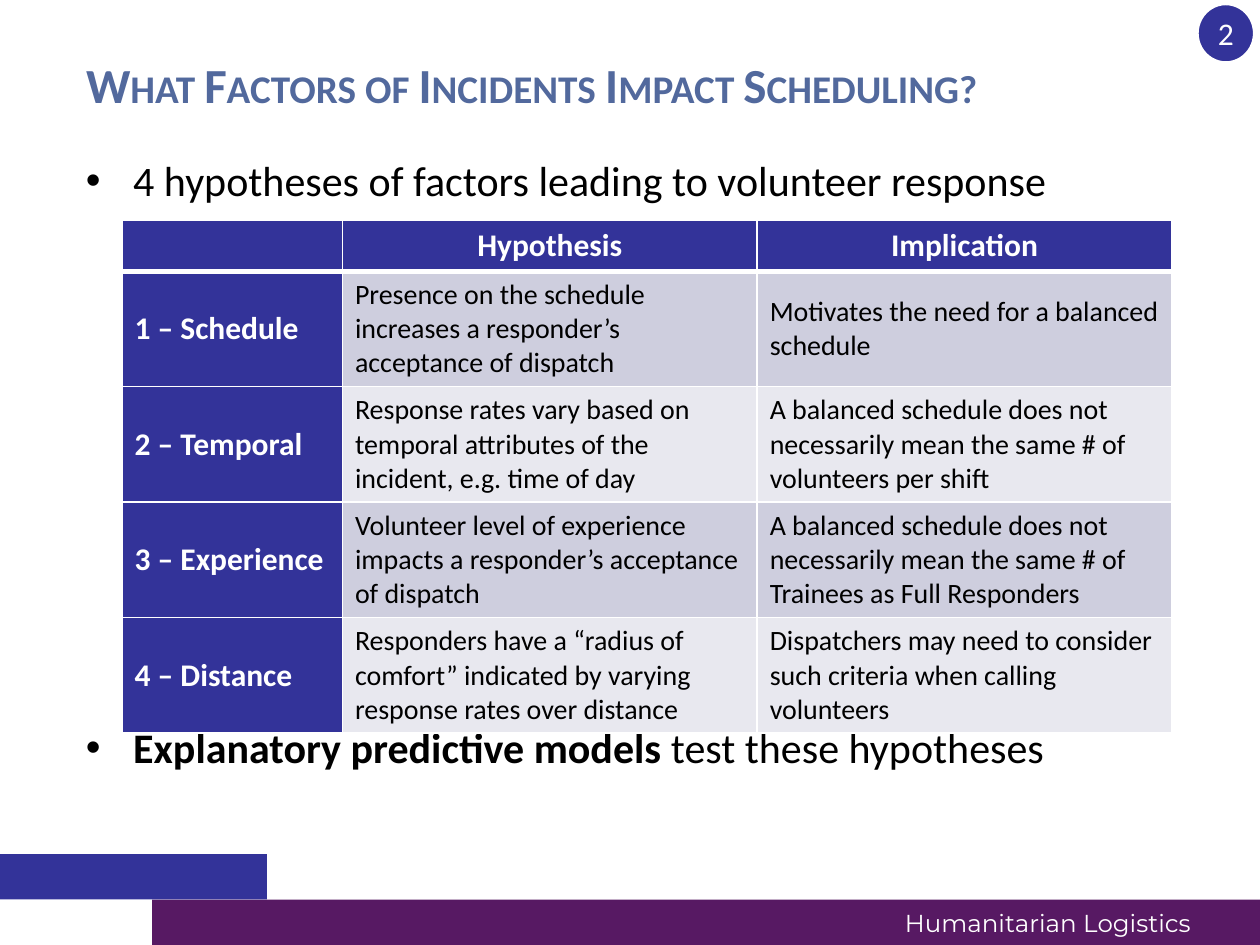
from lxml import etree
from pptx import Presentation
from pptx.dml.color import RGBColor
from pptx.enum.shapes import MSO_SHAPE
from pptx.enum.text import MSO_ANCHOR, PP_ALIGN
from pptx.oxml.ns import qn
from pptx.util import Pt

RECT, OVAL = MSO_SHAPE.RECTANGLE, MSO_SHAPE.OVAL
MIDDLE, TOP = MSO_ANCHOR.MIDDLE, MSO_ANCHOR.TOP
LEFT, CENTER = PP_ALIGN.LEFT, PP_ALIGN.CENTER

BLUE = RGBColor(0x33, 0x33, 0x99)
PURPLE = RGBColor(0x57, 0x19, 0x63)
TITLE_BLUE = RGBColor(0x52, 0x69, 0x9D)
BLACK = RGBColor(0x00, 0x00, 0x00)
WHITE = RGBColor(0xFF, 0xFF, 0xFF)
BANDS = [RGBColor(0xCE, 0xCE, 0xDE), RGBColor(0xE8, 0xE8, 0xEF)]

HEAD = dict(size=Pt(18), bold=True, color=WHITE)
CELL = dict(size=Pt(16), color=BLACK)
BODY = dict(size=Pt(24), color=BLACK)

ROWS = [
    ("", "Hypothesis", "Implication"),
    ("1 – Schedule",
     "Presence on the schedule increases a responder’s acceptance of dispatch",
     "Motivates the need for a balanced schedule"),
    ("2 – Temporal",
     "Response rates vary based on temporal attributes of the incident, e.g. time of day",
     "A balanced schedule does not necessarily mean the same # of volunteers per shift"),
    ("3 – Experience",
     "Volunteer level of experience impacts a responder’s acceptance of dispatch",
     "A balanced schedule does not necessarily mean the same # of Trainees as Full Responders"),
    ("4 – Distance",
     "Responders have a “radius of comfort” indicated by varying response rates over distance",
     "Dispatchers may need to consider such criteria when calling volunteers"),
]


class Deck:
    """Holds the style and the current slide."""

    def __init__(self, width, height, font):
        self.prs = Presentation()
        self.prs.slide_width, self.prs.slide_height = Pt(width), Pt(height)
        self.font = font
        self.s = self.prs.slides.add_slide(self.prs.slide_layouts[5])

    def run(self, p, text, color, **fmt):
        r = p.add_run()
        r.text = text
        r.font.color.rgb = color
        for name, value in {"name": self.font, **fmt}.items():
            setattr(r.font, name, value)
        return r

    def title(self, text, x, y, w, h, **fmt):
        sp = self.s.shapes.title
        sp.left, sp.top, sp.width, sp.height = Pt(x), Pt(y), Pt(w), Pt(h)
        tf = sp.text_frame
        tf.vertical_anchor = MIDDLE
        p = tf.paragraphs[0]
        p.alignment = LEFT
        r = self.run(p, text, **fmt)
        r.font._element.set("cap", "small")

    def shape(self, kind, x, y, w, h, fill, line=None):
        sp = self.s.shapes.add_shape(kind, Pt(x), Pt(y), Pt(w), Pt(h))
        sp.shadow.inherit = False
        sp.fill.solid()
        sp.fill.fore_color.rgb = fill
        if line:
            sp.line.color.rgb, sp.line.width = line, Pt(2)
        else:
            sp.line.fill.background()
        return sp

    def badge(self, text, x, y, w, h, fill, **fmt):
        tf = self.shape(OVAL, x, y, w, h, fill, WHITE).text_frame
        for side in ("left", "right", "top", "bottom"):
            setattr(tf, f"margin_{side}", 0)
        tf.vertical_anchor = MIDDLE
        p = tf.paragraphs[0]
        p.alignment = CENTER
        self.run(p, text, **fmt)

    def text_box(self, x, y, w, h):
        tf = self.s.shapes.add_textbox(Pt(x), Pt(y), Pt(w), Pt(h)).text_frame
        tf.word_wrap = True
        tf.vertical_anchor = TOP
        return tf

    def label(self, text, x, y, w, h, **fmt):
        self.run(self.text_box(x, y, w, h).paragraphs[0], text, **fmt)

    def bullets(self, items, x, y, w, h, gap, **fmt):
        tf = self.text_box(x, y, w, h)
        for i, parts in enumerate(items):
            p = tf.add_paragraph() if i else tf.paragraphs[0]
            pPr = p._p.get_or_add_pPr()
            pPr.set("marL", str(Pt(27)))
            pPr.set("indent", str(-Pt(27)))
            etree.SubElement(pPr, qn("a:buFont"), typeface="Arial")
            etree.SubElement(pPr, qn("a:buChar"), char="•")
            if i:
                p.space_before = Pt(gap)
            for text, bold in parts:
                self.run(p, text, bold=bold, **fmt)

    def borders(self, cell, bottom):
        tcPr = cell._tc.get_or_add_tcPr()
        widths = {"L": 1, "R": 1, "T": 1, "B": bottom}
        for i, (side, width) in enumerate(widths.items()):
            ln = etree.Element(qn(f"a:ln{side}"), w=str(Pt(width)))
            fill = etree.SubElement(ln, qn("a:solidFill"))
            etree.SubElement(fill, qn("a:srgbClr"), val=str(WHITE))
            tcPr.insert(i, ln)

    def table(self, rows, x, y, widths, heights):
        tbl = self.s.shapes.add_table(len(rows), len(widths), Pt(x), Pt(y),
                                      Pt(sum(widths)), Pt(sum(heights))).table
        for col, width in zip(tbl.columns, widths):
            col.width = Pt(width)
        for i, (row, height) in enumerate(zip(rows, heights)):
            tbl.rows[i].height = Pt(height)
            for j, text in enumerate(row):
                heading = i == 0 or j == 0
                cell = tbl.cell(i, j)
                cell.vertical_anchor = MIDDLE
                cell.fill.solid()
                cell.fill.fore_color.rgb = BLUE if heading else BANDS[(i - 1) % 2]
                self.borders(cell, 1 if i else 3)
                p = cell.text_frame.paragraphs[0]
                p.alignment = LEFT if i else CENTER
                if text:
                    self.run(p, text, **(HEAD if heading else CELL))


def main():
    deck = Deck(720, 540, "Calibri")

    # Footer bars
    deck.shape(RECT, 87, 514, 633, 26, PURPLE)
    deck.shape(RECT, 0, 488, 152.5, 26, BLUE)
    deck.label("Humanitarian Logistics", 510, 515.5, 210, 24.5,
               name="Montserrat", size=Pt(14), color=WHITE)

    # Title and page number
    deck.title("What Factors of Incidents Impact Scheduling?", 42, 18, 630, 60,
               size=Pt(28), bold=True, color=TITLE_BLUE)
    deck.badge("2", 684, 2, 33, 34, BLUE, size=Pt(18), color=WHITE)

    # Bullets above and below the table
    deck.bullets([
        [("4 hypotheses of factors leading to volunteer response", False)],
        [("Explanatory predictive models", True), (" test these hypotheses", False)],
    ], 42, 85, 630, 336, gap=295, **BODY)

    # Hypothesis table
    deck.table(ROWS, 69.7, 126, [126, 237, 237], [29] + [66] * 4)

    deck.prs.save("out.pptx")


if __name__ == "__main__":
    main()
